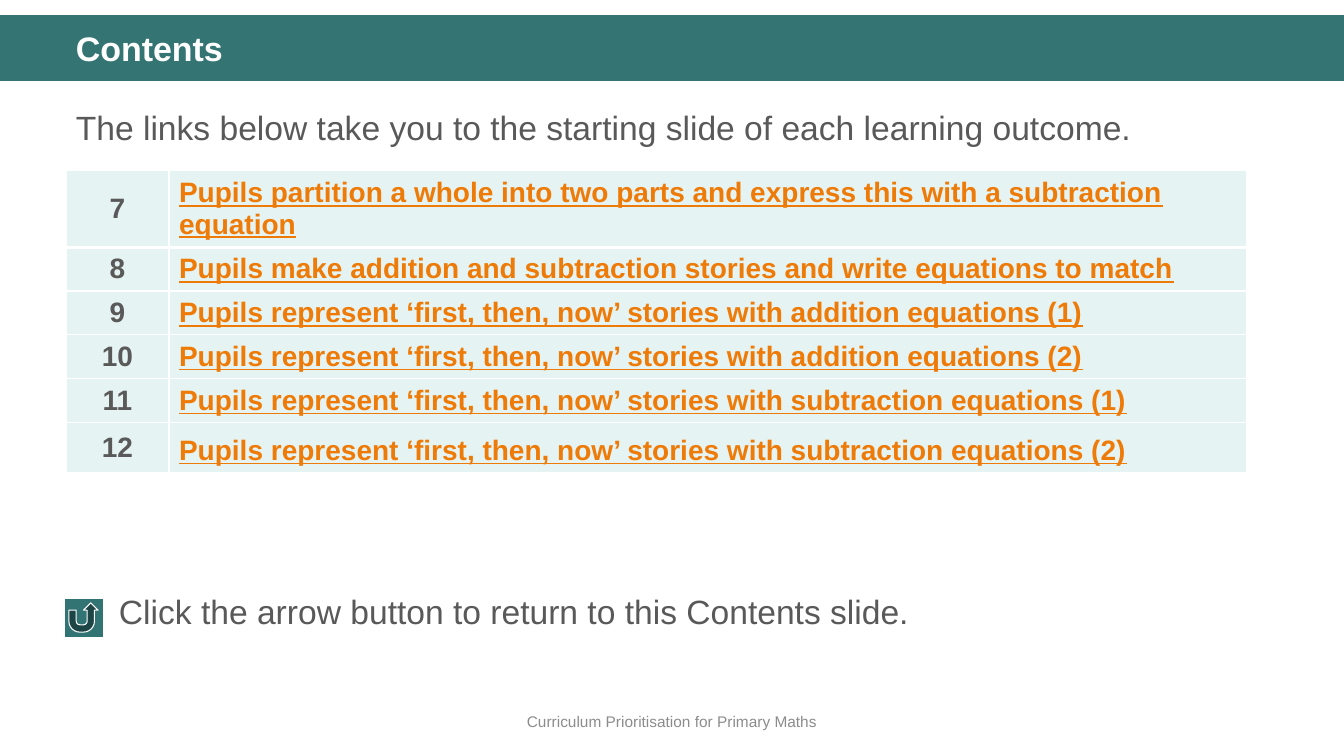
from lxml import etree
from pptx import Presentation
from pptx import util as u
from pptx.dml.color import RGBColor
from pptx.enum import shapes, text
from pptx.oxml import ns

PX = 914400 / 100.8
FONT = "Arial"
TEAL, BUTTON_TEAL, PALE_TEAL = "347574", "327473", "E5F3F2"
WHITE, GREY, FOOTER_GREY, ORANGE = "FFFFFF", "595959", "8C8C8C", "EE7B08"

OUTCOMES = [
    "Pupils partition a whole into two parts and express this with a subtraction equation",
    "Pupils make addition and subtraction stories and write equations to match",
    "Pupils represent ‘first, then, now’ stories with addition equations (1)",
    "Pupils represent ‘first, then, now’ stories with addition equations (2)",
    "Pupils represent ‘first, then, now’ stories with subtraction equations (1)",
    "Pupils represent ‘first, then, now’ stories with subtraction equations (2)",
]
FIRST_NUMBER = 7
COLUMN_WIDTHS = [103, 1078]
ROW_HEIGHTS = [72, 41, 41, 41, 42, 47]


def px(*lengths):
    return [u.Emu(round(n * PX)) for n in lengths]


def colour(hex_code):
    return RGBColor.from_string(hex_code)


def write(tf, words, size=24, color=GREY, bold=False, underline=False,
          align=text.PP_ALIGN.LEFT, spacing=None):
    p = tf.paragraphs[0]
    p.alignment = align
    if spacing:
        p.line_spacing = spacing
    r = p.add_run()
    r.text = words
    r.font.name = FONT
    r.font.size = u.Pt(size)
    r.font.bold = bold
    r.font.underline = underline
    r.font.color.rgb = colour(color)


def add_text(s, box, words, anchor=text.MSO_ANCHOR.TOP, **style):
    tf = s.shapes.add_textbox(*px(*box)).text_frame
    tf.word_wrap = True
    tf.vertical_anchor = anchor
    write(tf, words, **style)


def add_shape(s, kind, box, fill, line=None):
    sp = s.shapes.add_shape(kind, *px(*box))
    sp.shadow.inherit = False
    sp.fill.solid()
    sp.fill.fore_color.rgb = colour(fill)
    if line:
        sp.line.color.rgb = colour(line)
        sp.line.width = u.Pt(0.75)
    else:
        sp.line.fill.background()


def set_border(cell, side, points):
    """Draw one white edge; side is L, R, T or B."""
    ln = etree.SubElement(cell._tc.get_or_add_tcPr(), ns.qn(f"a:ln{side}"),
                          w=str(u.Pt(points)))
    fill = etree.SubElement(ln, ns.qn("a:solidFill"))
    etree.SubElement(fill, ns.qn("a:srgbClr"), val=WHITE)


def format_cell(cell, top, bottom):
    cell.vertical_anchor = text.MSO_ANCHOR.MIDDLE
    for side, points in zip("LRTB", (1, 1, top, bottom)):
        set_border(cell, side, points)
    cell.fill.solid()
    cell.fill.fore_color.rgb = colour(PALE_TEAL)


def add_outcomes_table(s, left, top):
    box = px(left, top, sum(COLUMN_WIDTHS), sum(ROW_HEIGHTS))
    table = s.shapes.add_table(len(OUTCOMES), 2, *box).table
    for column, width in zip(table.columns, px(*COLUMN_WIDTHS)):
        column.width = width
    for row, height in zip(table.rows, px(*ROW_HEIGHTS)):
        row.height = height
    last = len(OUTCOMES) - 1
    for i, outcome in enumerate(OUTCOMES):
        number, link = table.cell(i, 0), table.cell(i, 1)
        for cell in (number, link):
            format_cell(cell, top=3 if i == 1 else 1, bottom=3 if i == 0 else 1)
        write(number.text_frame, str(FIRST_NUMBER + i), size=20, bold=True,
              align=text.PP_ALIGN.CENTER)
        write(link.text_frame, outcome, size=20, color=ORANGE, bold=True,
              underline=True, spacing=1.2 if i == last else None)


def main():
    prs = Presentation()
    prs.slide_width, prs.slide_height = px(1344, 756)
    s = prs.slides.add_slide(prs.slide_layouts[6])

    add_shape(s, shapes.MSO_SHAPE.RECTANGLE, (0, 15, 1344, 66), TEAL)
    add_text(s, (66, 27, 1228, 47), "Contents", size=24.3, color=WHITE,
             bold=True, spacing=0.9)
    add_text(s, (66, 94, 1228, 60),
             "The links below take you to the starting slide of each learning outcome.",
             spacing=1.2)
    add_outcomes_table(s, 66, 170)
    add_shape(s, shapes.MSO_SHAPE.ACTION_BUTTON_RETURN, (64, 598, 39, 39),
              BUTTON_TEAL, line=WHITE)
    add_text(s, (109, 586, 1141, 50),
             "Click the arrow button to return to this Contents slide.")
    add_text(s, (0, 701, 1344, 40), "Curriculum Prioritisation for Primary Maths",
             anchor=text.MSO_ANCHOR.MIDDLE, size=11, color=FOOTER_GREY,
             align=text.PP_ALIGN.CENTER)
    prs.save("out.pptx")


if __name__ == "__main__":
    main()
